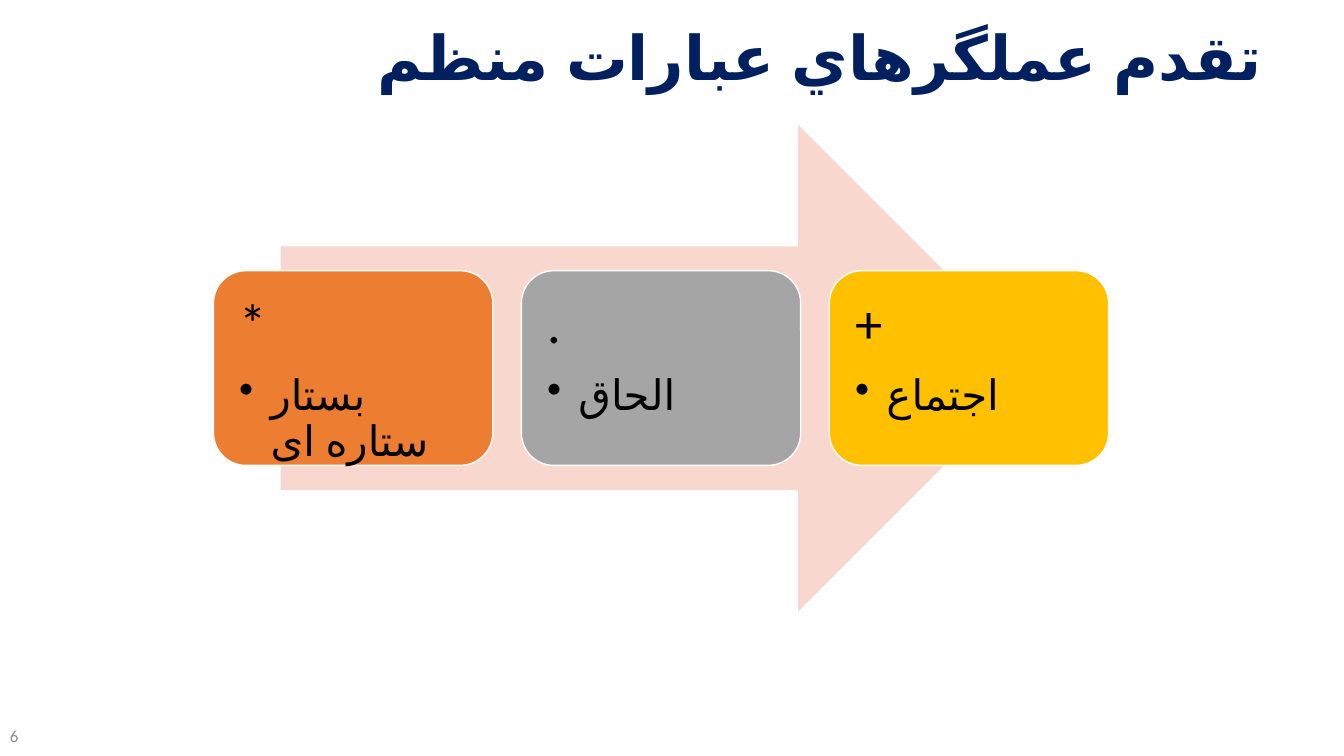
from dataclasses import dataclass

from lxml import etree
from pptx import Presentation
from pptx import util as u
from pptx.dml.color import RGBColor
from pptx.enum import lang, shapes, text
from pptx.oxml import ns


@dataclass(frozen=True)
class Theme:
    font: str = "Calibri"
    script_font: str = "+mn-cs"
    title: str = "002060"
    ink: str = "000000"
    number: str = "8C8C8C"
    arrow: str = "F8D7CE"
    border: str = "FFFFFF"
    title_size: int = 44
    symbol_size: int = 39
    name_size: int = 30
    number_size: int = 12


THEME = Theme()
OPERATORS = [
    ("*", "بستار ستاره ای", "ED7D31"),
    (".", "الحاق", "A5A5A5"),
    ("+", "اجتماع", "FFC000"),
]


def lengths(*values):
    return [u.Cm(value) for value in values]


def add_frame(slide, box, anchor, inset=None):
    frame = slide.shapes.add_textbox(*lengths(*box)).text_frame
    frame.word_wrap = True
    frame.vertical_anchor = anchor
    if inset is not None:
        frame.margin_left = frame.margin_right = u.Cm(inset)
        frame.margin_top = frame.margin_bottom = u.Cm(inset)
    return frame


def add_run(paragraph, words, size, color, bold=False):
    run = paragraph.add_run()
    run.text = words
    run.font.size = u.Pt(size)
    run.font.name = THEME.font
    run.font.bold = bold
    run.font.color.rgb = RGBColor.from_string(color)
    return run


def add_persian_run(paragraph, words, size, color, bold=False):
    run = add_run(paragraph, words, size, color, bold)
    run.font.language_id = lang.MSO_LANGUAGE_ID.FARSI
    etree.SubElement(run.font._element, ns.qn("a:cs"), typeface=THEME.script_font)


def space_after_percent(paragraph, percent):
    after = etree.SubElement(paragraph._p.get_or_add_pPr(), ns.qn("a:spcAft"))
    etree.SubElement(after, ns.qn("a:spcPct"), val=str(percent * 1000))


def add_bullet(paragraph, indent):
    props = paragraph._p.get_or_add_pPr()
    props.set("marL", str(u.Cm(indent)))
    props.set("indent", str(-u.Cm(indent)))
    etree.SubElement(props, ns.qn("a:buChar"), char="•")


def add_block(slide, kind, box, fill, border=None):
    block = slide.shapes.add_shape(kind, *lengths(*box))
    block.shadow.inherit = False
    block.fill.solid()
    block.fill.fore_color.rgb = RGBColor.from_string(fill)
    if border:
        block.line.color.rgb = RGBColor.from_string(border)
        block.line.width = u.Pt(1)
    else:
        block.line.fill.background()


def add_title(slide, box, words):
    heading = add_frame(slide, box, text.MSO_ANCHOR.MIDDLE).paragraphs[0]
    heading.alignment = text.PP_ALIGN.RIGHT
    heading.line_spacing = 0.9
    heading._p.get_or_add_pPr().set("rtl", "1")
    add_persian_run(heading, words, THEME.title_size, THEME.title, bold=True)


def add_slide_number(slide, box, number):
    line = add_frame(slide, box, text.MSO_ANCHOR.MIDDLE).paragraphs[0]
    add_run(line, number, THEME.number_size, THEME.number)


def add_operator(slide, box, symbol, name, fill):
    add_block(slide, shapes.MSO_SHAPE.ROUNDED_RECTANGLE, box, fill, THEME.border)
    left, top, width, height = box
    pad = 0.24
    inner = (left + pad, top + pad, width - 2 * pad, height - 2 * pad)
    frame = add_frame(slide, inner, text.MSO_ANCHOR.TOP, inset=0.41)

    symbol_line = frame.paragraphs[0]
    symbol_line.line_spacing = 0.9
    space_after_percent(symbol_line, 35)
    add_run(symbol_line, symbol, THEME.symbol_size, THEME.ink)

    name_line = frame.add_paragraph()
    name_line.level = 1
    name_line.line_spacing = 0.9
    space_after_percent(name_line, 15)
    add_bullet(name_line, 0.79)
    add_persian_run(name_line, name, THEME.name_size, THEME.ink)


def add_precedence_arrow(slide, box, operators):
    """Draw the arrow in the middle 85% of the box, with the operators across it."""
    left, top, width, height = box
    arrow_width = 0.85 * width
    arrow_box = (left + (width - arrow_width) / 2, top, arrow_width, height)
    add_block(slide, shapes.MSO_SHAPE.RIGHT_ARROW, arrow_box, THEME.arrow)

    card_width, card_height = 7.04, 0.4 * height
    pitch = (width - card_width) / (len(operators) - 1)
    card_top = top + (height - card_height) / 2
    for index, operator in enumerate(operators):
        card = (left + index * pitch, card_top, card_width, card_height)
        add_operator(slide, card, *operator)


def main():
    deck = Presentation()
    deck.slide_width, deck.slide_height = lengths(33.87, 19.05)
    slide = deck.slides.add_slide(deck.slide_layouts[6])
    add_title(slide, (0.61, 0.38, 31.47, 2.29), "تقدم عملگرهاي عبارات منظم")
    add_slide_number(slide, (0, 18.03, 1.8, 1.02), "6")
    add_precedence_arrow(slide, (5.38, 3.14, 22.56, 12.27), OPERATORS)
    deck.save("out.pptx")


if __name__ == "__main__":
    main()
